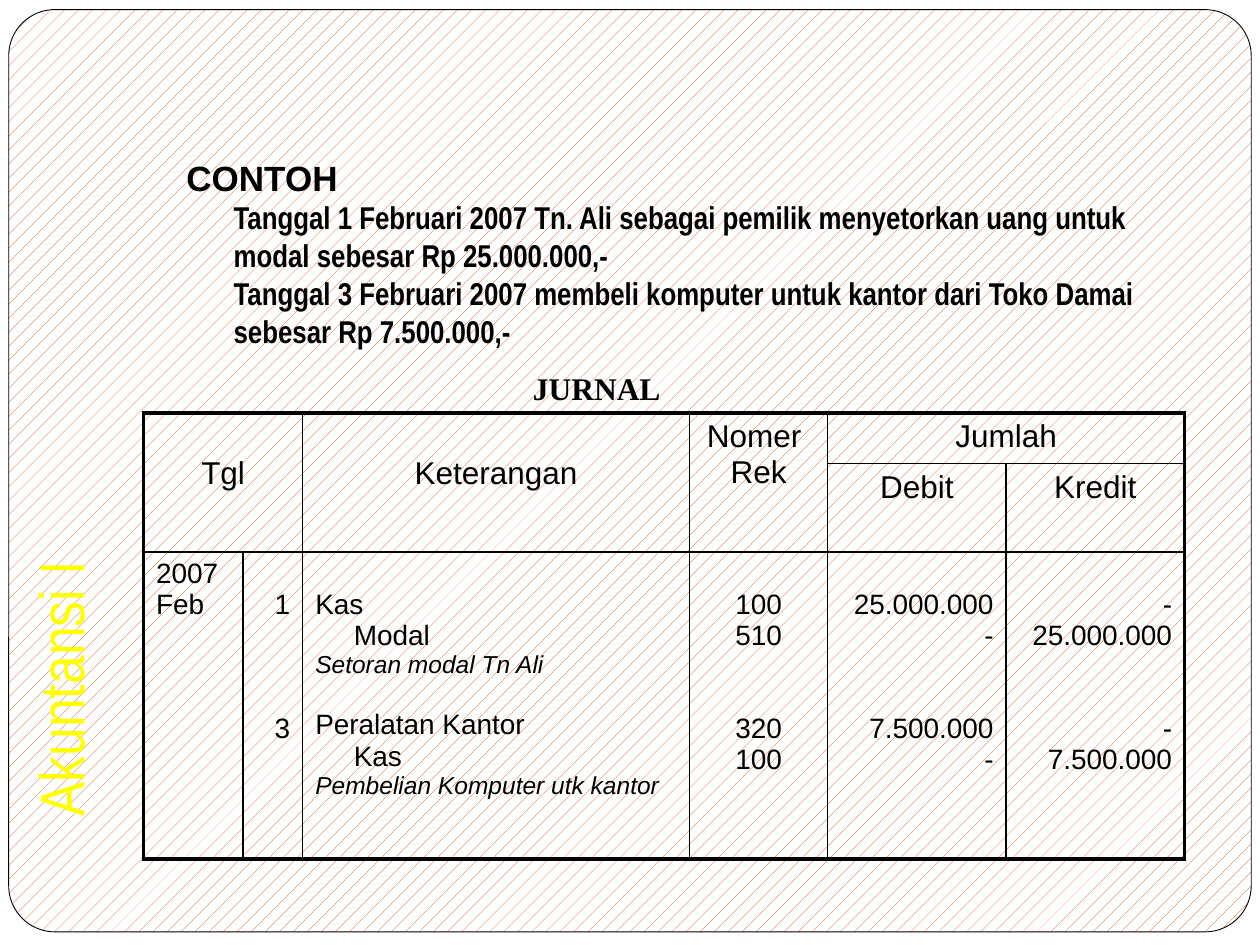
from lxml.etree import SubElement
from pptx import Presentation
from pptx.dml.color import RGBColor
from pptx.enum.dml import MSO_PATTERN_TYPE as Pattern
from pptx.enum.shapes import MSO_SHAPE as Shape
from pptx.enum.text import PP_ALIGN as Align
from pptx.oxml.ns import qn
from pptx.util import Pt

BLACK, WHITE, ORANGE, YELLOW = "000000", "FFFFFF", "D34817", "FFFF00"
NO_STYLE = "{2D5ABB26-0587-4C30-8999-92F81FD0307C}"
LINE = 17.7  # height of one journal line
PADDING = 3.6

HEADING = {"size": 18}
ENTRY = {"size": 16}
NOTE = {"size": 14, "italic": True}
CREDIT_ENTRY = {"size": 16, "indent": 22}


def after(lines, style=ENTRY):
    """Return the style with a gap of some journal lines above it."""
    return {**style, "before": lines * LINE}


def color(hex_value):
    return RGBColor.from_string(hex_value)


def hatch(fill):
    fill.patterned()
    fill.pattern = Pattern.PERCENT_10
    fill.fore_color.rgb = color(ORANGE)
    fill.back_color.rgb = color(WHITE)


def write(frame, paragraphs, align=Align.LEFT):
    """Fill a text frame with (text, style) pairs."""
    for number, (text, style) in enumerate(paragraphs):
        paragraph = frame.paragraphs[0] if number == 0 else frame.add_paragraph()
        paragraph.alignment = align
        style = {"name": "Arial", "color": BLACK, **style}
        if "indent" in style:
            paragraph._p.get_or_add_pPr().set("marL", str(Pt(style.pop("indent"))))
        if "before" in style:
            paragraph.space_before = Pt(style.pop("before"))
        run = paragraph.add_run()
        run.text = text
        run.font.color.rgb = color(style.pop("color"))
        style["size"] = Pt(style["size"])
        for attribute, value in style.items():
            setattr(run.font, attribute, value)


def add_text(slide, place, paragraphs, wrap=True, rotation=0):
    box = slide.shapes.add_textbox(*map(Pt, place))
    box.rotation = rotation
    box.text_frame.word_wrap = wrap
    write(box.text_frame, paragraphs)


def add_page(slide):
    hatch(slide.background.fill)
    sheet = slide.shapes.add_shape(Shape.RECTANGLE, 0, 0, Pt(720), Pt(540))
    sheet.fill.solid()
    sheet.fill.fore_color.rgb = color(WHITE)
    sheet.line.fill.background()
    panel = slide.shapes.add_shape(
        Shape.ROUNDED_RECTANGLE, Pt(5), Pt(5.5), Pt(710), Pt(527))
    panel.adjustments[0] = 0.05
    hatch(panel.fill)
    panel.line.color.rgb = color(BLACK)
    panel.line.width = Pt(0.5)
    for shape in (sheet, panel):
        shape.shadow.inherit = False


def add_borders(cell, outer_edges):
    """Draw thick lines on the edges of the journal and thin ones inside."""
    properties = cell._tc.get_or_add_tcPr()
    for edge in "LRTB":
        width = Pt(2.25 if edge in outer_edges else 1)
        line = SubElement(properties, qn(f"a:ln{edge}"), w=str(width))
        fill = SubElement(line, qn("a:solidFill"))
        SubElement(fill, qn("a:srgbClr"), val=BLACK)


def add_journal(slide, widths, heights, merges, contents):
    """Contents map (row, column) to (blank lines' height, alignment, paragraphs)."""
    table = slide.shapes.add_table(
        len(heights), len(widths), Pt(82), Pt(236),
        Pt(sum(widths)), Pt(sum(heights))).table
    table.first_row = table.horz_banding = False
    table._tbl.tblPr.find(qn("a:tableStyleId")).text = NO_STYLE
    for column, width in zip(table.columns, widths):
        column.width = Pt(width)
    for row, height in zip(table.rows, heights):
        row.height = Pt(height)
    for first, last in merges:
        table.cell(*first).merge(table.cell(*last))

    for (row, column), (offset, align, paragraphs) in contents.items():
        cell = table.cell(row, column)
        last_row = row + (cell.span_height if cell.is_merge_origin else 1)
        last_column = column + (cell.span_width if cell.is_merge_origin else 1)
        at_edge = {"L": column == 0, "R": last_column == len(widths),
                   "T": row == 0, "B": last_row == len(heights)}
        add_borders(cell, [edge for edge, outer in at_edge.items() if outer])
        cell.fill.background()
        cell.margin_top = Pt(PADDING + offset)
        write(cell.text_frame, paragraphs, align)


def heading(*lines, offset=0):
    return offset, Align.CENTER, [(line, HEADING) for line in lines]


def figures(align, first, second, third, fourth):
    """Two journal entries of two lines each."""
    return LINE, align, [(first, ENTRY), (second, ENTRY),
                         (third, after(2)), (fourth, ENTRY)]


def main():
    deck = Presentation()
    deck.slide_width, deck.slide_height = Pt(720), Pt(540)
    slide = deck.slides.add_slide(deck.slide_layouts[6])
    add_page(slide)

    add_text(slide, (-144.7, 275.8, 351.4, 44.6), [
        ("Akuntansi I", {"size": 36, "name": "Arial Narrow", "color": YELLOW}),
    ], wrap=False, rotation=270)

    example = {"size": 18, "name": "Arial Narrow", "bold": True, "indent": 27}
    add_text(slide, (99.4, 85.7, 589.7, 118), [
        ("CONTOH", {"size": 20, "bold": True}),
        ("Tanggal 1 Februari 2007 Tn. Ali sebagai pemilik menyetorkan uang "
         "untuk modal sebesar Rp 25.000.000,-", example),
        ("Tanggal 3 Februari 2007 membeli komputer untuk kantor dari Toko "
         "Damai sebesar Rp 7.500.000,-", example),
    ])

    add_journal(
        slide,
        widths=[57, 34, 221, 79, 102, 102],
        heights=[28.5, 50.5, 175.5],
        merges=[((0, 0), (1, 1)), ((0, 2), (1, 2)),
                ((0, 3), (1, 3)), ((0, 4), (0, 5))],
        contents={
            (0, 0): heading("Tgl", offset=20.7),
            (0, 2): heading("Keterangan", offset=20.7),
            (0, 3): heading("Nomer ", "Rek"),
            (0, 4): heading("Jumlah"),
            (1, 4): heading("Debit"),
            (1, 5): heading("Kredit"),
            (2, 0): (0, Align.LEFT, [("2007", ENTRY), ("Feb", ENTRY)]),
            (2, 1): (LINE, Align.RIGHT, [("1", ENTRY), ("3", after(3))]),
            (2, 2): (LINE, Align.LEFT, [
                ("Kas", ENTRY),
                ("Modal", CREDIT_ENTRY),
                ("Setoran modal Tn Ali", NOTE),
                ("Peralatan Kantor", after(1)),
                ("Kas", CREDIT_ENTRY),
                ("Pembelian Komputer utk kantor", NOTE),
            ]),
            (2, 3): figures(Align.CENTER, "100", "510", "320", "100"),
            (2, 4): figures(Align.RIGHT, "25.000.000", "-", "7.500.000", "-"),
            (2, 5): figures(Align.RIGHT, "-", "25.000.000", "-", "7.500.000"),
        })

    add_text(slide, (297.4, 207.4, 147.6, 28.8), [
        ("JURNAL", {"size": 18, "name": "Times New Roman", "bold": True}),
    ])
    deck.save("out.pptx")


if __name__ == "__main__":
    main()
